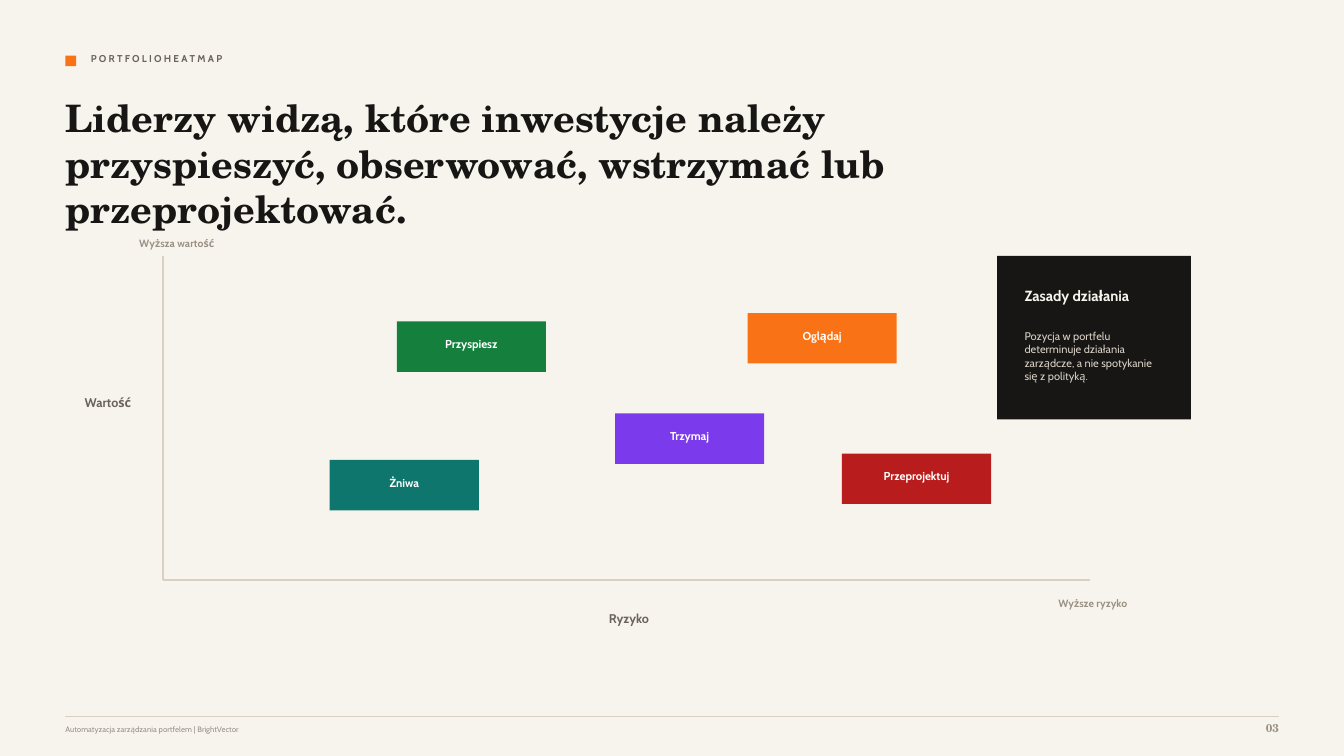
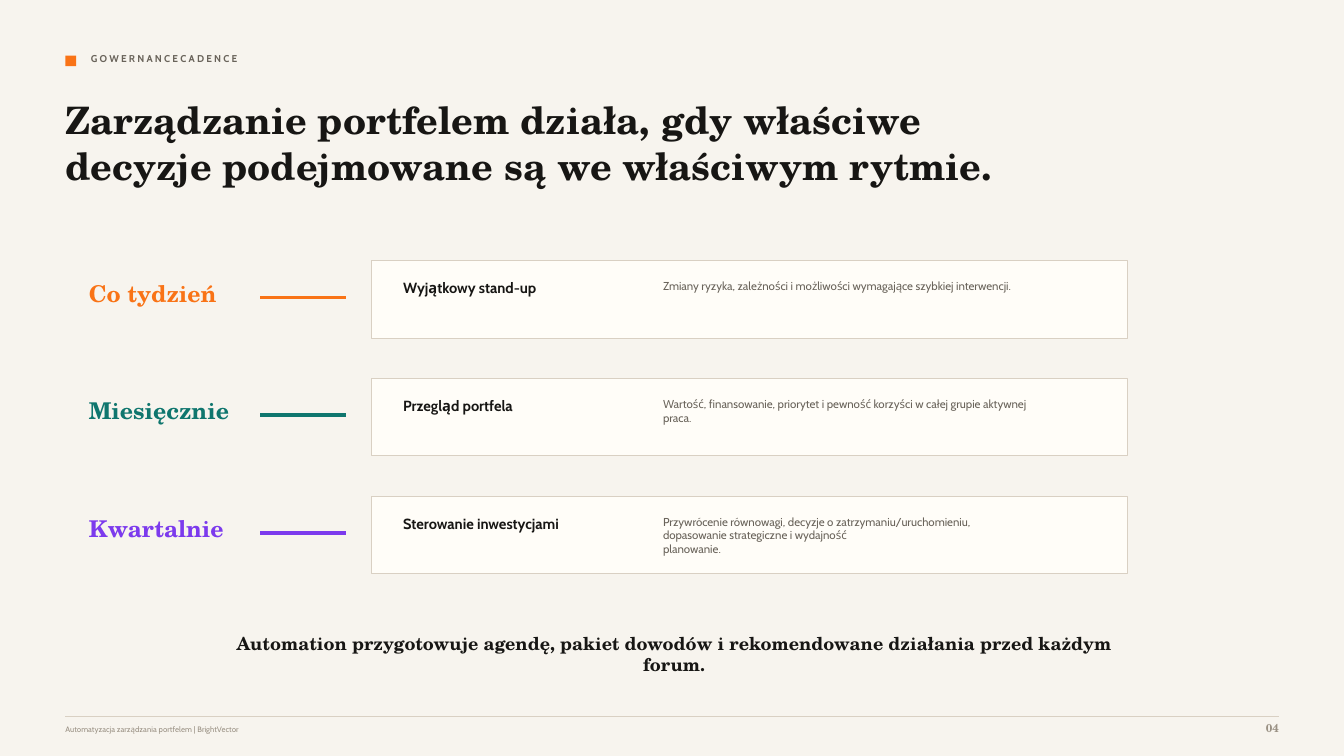
from pptx import Presentation
from pptx.dml.color import RGBColor
from pptx.enum.shapes import MSO_CONNECTOR, MSO_SHAPE
from pptx.enum.text import MSO_ANCHOR, PP_ALIGN
from pptx.oxml.ns import qn
from pptx.util import Cm, Pt
from lxml import etree

RECTANGLE = MSO_SHAPE.RECTANGLE
STRAIGHT = MSO_CONNECTOR.STRAIGHT
TOP = MSO_ANCHOR.TOP
LEFT, CENTER, RIGHT = PP_ALIGN.LEFT, PP_ALIGN.CENTER, PP_ALIGN.RIGHT

SANS, SERIF = "Cabin", "TeX Gyre Schola"
PAPER, CARD, INK = "F7F4EE", "FFFDF8", "171614"
BODY, MUTED, RULE = "69635A", "9A9184", "D9D0C3"
PALE, WHITE = "D8D0C4", "FFFFFF"
ORANGE, TEAL, VIOLET = "F97316", "0F766E", "7C3AED"
GREEN, RED = "15803D", "B91C1C"

MARGIN, RIGHT_EDGE = 1.65, 32.23


def add_box(slide, box, paragraphs=(), fill=None, outline=None,
            align=LEFT, insets=(0, 0, 0), gap=0):
    """Add a filled rectangle, or a text box when there is no fill.

    box is left, top, width, height in cm; insets are left, top, right in cm;
    each paragraph is (text, size, font, colour, bold); gap is in points.
    """
    place = [Cm(value) for value in box]
    if fill:
        shape = slide.shapes.add_shape(RECTANGLE, *place)
        shape.shadow.inherit = False
        shape.fill.solid()
        shape.fill.fore_color.rgb = RGBColor.from_string(fill)
        if outline:
            shape.line.color.rgb = RGBColor.from_string(outline)
            shape.line.width = Pt(0.75)
        else:
            shape.line.fill.background()
    else:
        shape = slide.shapes.add_textbox(*place)

    frame = shape.text_frame
    frame.word_wrap = True
    frame.vertical_anchor = TOP
    frame.margin_left, frame.margin_top, frame.margin_right = map(Cm, insets)
    frame.margin_bottom = 0
    for index, (text, size, font, colour, bold) in enumerate(paragraphs):
        paragraph = frame.add_paragraph() if index else frame.paragraphs[0]
        paragraph.alignment = align
        if index and gap:
            paragraph.space_before = Pt(gap)
        run = paragraph.add_run()
        run.text = text
        run.font.size = Pt(size)
        run.font.name = font
        run.font.bold = bold
        run.font.color.rgb = RGBColor.from_string(colour)


def add_line(slide, start, end, colour, width):
    line = slide.shapes.add_connector(STRAIGHT, *map(Cm, start + end))
    line.line.color.rgb = RGBColor.from_string(colour)
    line.line.width = Pt(width)
    etree.SubElement(line._element.spPr, qn("a:effectLst"))


presentation = Presentation()
presentation.slide_width = Cm(33.87)
presentation.slide_height = Cm(19.05)
blank_layout = presentation.slide_layouts[6]

# Shared frame: kicker, title, title top and width, page number
frames = [
    ("P O R T F O L I O H E A T M A P",
     "Liderzy widzą, które inwestycje należy przyspieszyć, obserwować, "
     "wstrzymać lub przeprojektować.", 2.39, 22.76, "03"),
    ("G O W E R N A N C E C A D E N C E",
     "Zarządzanie portfelem działa, gdy właściwe decyzje podejmowane są "
     "we właściwym rytmie.", 2.44, 23.83, "04"),
]
slides = []
for kicker, title, title_top, title_width, number in frames:
    slide = presentation.slides.add_slide(blank_layout)
    slide.background.fill.solid()
    slide.background.fill.fore_color.rgb = RGBColor.from_string(PAPER)
    add_box(slide, (MARGIN, 1.4, 0.27, 0.27), fill=ORANGE)
    add_box(slide, (2.29, 1.32, 14.8, 0.48), [(kicker, 7.1, SANS, BODY, True)])
    add_box(slide, (MARGIN, title_top, title_width, 2.6),
            [(title, 27, SERIF, INK, True)])
    add_line(slide, (MARGIN, 18.05), (RIGHT_EDGE, 18.05), RULE, 0.75)
    add_box(slide, (MARGIN, 18.26, 20.12, 0.38),
            [("Automatyzacja zarządzania portfelem | BrightVector",
              5.6, SANS, MUTED, False)])
    add_box(slide, (RIGHT_EDGE - 1.27, 18.16, 1.27, 0.48),
            [(number, 8.2, SERIF, MUTED, True)], align=RIGHT)
    slides.append(slide)
heatmap, cadence = slides

# Portfolio heatmap
axis_left, axis_bottom = 4.1, 14.62
add_line(heatmap, (axis_left, axis_bottom), (27.46, axis_bottom), RULE, 1.5)
add_line(heatmap, (axis_left, 6.45), (axis_left, axis_bottom), RULE, 1.5)

axis_labels = [
    ("Wyższa wartość", 3.51, 5.97, 3.18, 7.5, MUTED, LEFT),
    ("Wyższe ryzyko", 26.67, 15.04, 2.64, 7.5, MUTED, LEFT),
    ("Wartość", 1.96, 9.96, 1.52, 9, BODY, CENTER),
    ("Ryzyko", 15.09, 15.39, 1.52, 9, BODY, CENTER),
]
for text, left, top, width, size, colour, align in axis_labels:
    add_box(heatmap, (left, top, width, 0.48),
            [(text, size, SANS, colour, True)], align=align)

actions = [
    ("Przyspiesz", 10, 8.1, GREEN),
    ("Oglądaj", 18.84, 7.89, ORANGE),
    ("Przeprojektuj", 21.22, 11.43, RED),
    ("Żniwa", 8.31, 11.59, TEAL),
    ("Trzymaj", 15.5, 10.42, VIOLET),
]
for text, left, top, colour in actions:
    add_box(heatmap, (left, top, 3.76, 1.27), [(text, 8.2, SANS, WHITE, True)],
            fill=colour, align=CENTER, insets=(0.3, 0.4, 0.3))

add_box(heatmap, (25.13, 6.45, 4.88, 4.12), [
    ("Zasady działania", 10.5, SANS, PAPER, True),
    ("Pozycja w portfelu determinuje działania zarządcze, a nie spotykanie "
     "się z polityką.", 7.9, SANS, PALE, False),
], fill=INK, insets=(0.69, 0.79, 0.86), gap=17.5)

# Governance cadence
rhythms = [
    ("Co tydzień", ORANGE, "Wyjątkowy stand-up",
     ["Zmiany ryzyka, zależności i możliwości wymagające szybkiej "
      "interwencji."]),
    ("Miesięcznie", TEAL, "Przegląd portfela",
     ["Wartość, finansowanie, priorytet i pewność korzyści w całej grupie "
      "aktywnej", "praca."]),
    ("Kwartalnie", VIOLET, "Sterowanie inwestycjami",
     ["Przywrócenie równowagi, decyzje o zatrzymaniu/uruchomieniu, "
      "dopasowanie strategiczne i wydajność", "planowanie."]),
]
row_pitch = 2.97
for row, (period, colour, meeting, details) in enumerate(rhythms):
    card_top = 6.56 + row * row_pitch
    text_top = card_top + 0.47
    rule_y = card_top + 0.93
    add_box(cadence, (2.24, text_top, 3.76, 0.74),
            [(period, 16.5, SERIF, colour, True)])
    add_line(cadence, (6.56, rule_y), (8.72, rule_y), colour, 2.25)
    add_box(cadence, (9.37, card_top, 19.05, 1.96), fill=CARD, outline=RULE)
    add_box(cadence, (10.16, text_top, 5.82, 0.48),
            [(meeting, 10.5, SANS, INK, True)])
    add_box(cadence, (16.71, text_top, 9.27, 0.97),
            [(detail, 8.2, SANS, BODY, False) for detail in details])

add_box(cadence, (5.61, 15.93, 22.76, 0.69),
        [("Automation przygotowuje agendę, pakiet dowodów i rekomendowane "
          "działania przed każdym forum.", 12.8, SERIF, INK, True)],
        align=CENTER)

presentation.save("out.pptx")
